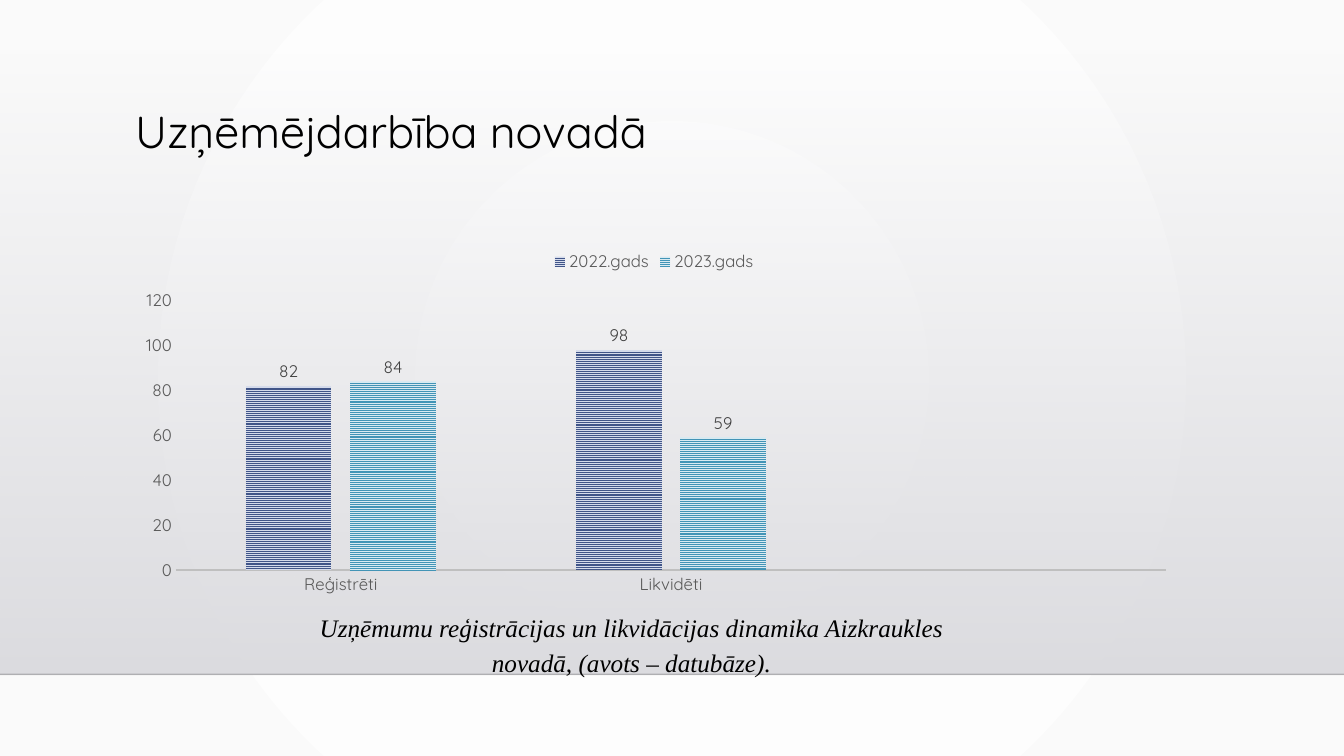
from lxml import etree
from pptx import Presentation
from pptx.chart.data import CategoryChartData
from pptx.dml.color import RGBColor
from pptx.enum import chart as ch, dml, shapes, text
from pptx.oxml import parse_xml
from pptx.oxml.ns import nsdecls, qn
from pptx.util import Pt

BLACK = RGBColor(0x00, 0x00, 0x00)
EDGE = RGBColor(0x00, 0x00, 0x01)
WHITE = RGBColor(0xFF, 0xFF, 0xFF)
OFF_WHITE = RGBColor(0xFA, 0xFA, 0xFA)
BAND_TOP = RGBColor(0xDC, 0xDC, 0xE0)
BAND_BOTTOM = RGBColor(0xDE, 0xDE, 0xE2)
AXIS_LINE = RGBColor(0xBF, 0xBF, 0xBF)
AXIS_TEXT = RGBColor(0x59, 0x59, 0x59)
LABEL_TEXT = RGBColor(0x40, 0x40, 0x40)

SANS, SERIF = "Quicksand", "Times New Roman"
WIDTH, HEIGHT = Pt(960), Pt(540)
BAND_Y, BAND_END = Pt(36.72), Pt(481.68)

CATEGORIES = ["Reģistrēti", "Likvidēti", ""]
# Year, values, pattern foreground, pattern background
YEARS = [
    ("2022.gads", (82, 98, None),
     RGBColor(0x41, 0x55, 0x88), RGBColor(0xD5, 0xDB, 0xEB)),
    ("2023.gads", (84, 59, None),
     RGBColor(0x42, 0x94, 0xB6), RGBColor(0xD9, 0xEA, 0xF1)),
]
PLOT_AREA = {"x": 0.048, "y": 0.167, "w": 0.936, "h": 0.743}


def style_font(font, face, size, colour):
    font.name, font.size = face, Pt(size)
    font.color.rgb = colour


def set_alpha(colour_element, percent):
    etree.SubElement(colour_element, qn("a:alpha")).set("val", str(percent * 1000))


def add_background(slide):
    slide._element.cSld.insert(0, parse_xml(
        f'<p:bg {nsdecls("p", "a")}><p:bgPr><a:gradFill rotWithShape="1"><a:gsLst>'
        f'<a:gs pos="0"><a:srgbClr val="{WHITE}"/></a:gs>'
        f'<a:gs pos="100000"><a:srgbClr val="{OFF_WHITE}"/></a:gs></a:gsLst>'
        '<a:path path="circle"><a:fillToRect l="50000" t="50000" r="50000" b="50000"/>'
        '</a:path></a:gradFill><a:effectLst/></p:bgPr></p:bg>'))


def add_band(slide):
    band = slide.shapes.add_shape(
        shapes.MSO_SHAPE.RECTANGLE, 0, BAND_Y, WIDTH, BAND_END - BAND_Y)
    band.shadow.inherit = False
    band.line.fill.background()
    band.fill.gradient()
    band.fill.gradient_angle = 270
    for stop, position, colour in zip(
            band.fill.gradient_stops, (0, 1), (BAND_TOP, BAND_BOTTOM)):
        stop.position = position
        stop.color.rgb = colour
    set_alpha(next(band._element.spPr.iter(qn("a:srgbClr"))), 0)
    return band


def add_edge(slide):
    edge = slide.shapes.add_connector(
        shapes.MSO_CONNECTOR.STRAIGHT, 0, BAND_END, WIDTH, BAND_END)
    edge.line.width = Pt(1)
    edge.line.color.rgb = EDGE
    properties = edge._element.spPr
    set_alpha(next(properties.iter(qn("a:srgbClr"))), 20)
    etree.SubElement(properties, qn("a:effectLst"))
    return edge


def send_to_back(slide, parts):
    for place, part in enumerate(parts, start=2):
        slide.shapes._spTree.insert(place, part._element)


def write(frame, words, face, size, spacing, align):
    frame.word_wrap = True
    paragraph = frame.paragraphs[0]
    paragraph.alignment = align
    paragraph.line_spacing = spacing
    run = paragraph.add_run()
    run.text = words
    style_font(run.font, face, size, BLACK)
    return paragraph


def fill_title(slide, words):
    title = slide.shapes.title
    title.left, title.top = Pt(89.28), Pt(74.88)
    title.width, title.height = Pt(756), Pt(82.8)
    title.text_frame.vertical_anchor = text.MSO_ANCHOR.TOP
    write(title.text_frame, words, SANS, 32, 0.9, text.PP_ALIGN.LEFT)


def add_caption(slide, words):
    caption = slide.shapes.add_textbox(Pt(210.96), Pt(430.56), Pt(480.24), Pt(56.16))
    paragraph = write(caption.text_frame, words, SERIF, 18, 1.15, text.PP_ALIGN.CENTER)
    caption.text_frame.auto_size = text.MSO_AUTO_SIZE.SHAPE_TO_FIT_TEXT
    paragraph.space_after = Pt(10)
    paragraph.runs[0].font.italic = True


def style_axis(axis):
    axis.has_major_gridlines = False
    axis.major_tick_mark = axis.minor_tick_mark = ch.XL_TICK_MARK.NONE
    style_font(axis.tick_labels.font, SANS, 12, AXIS_TEXT)


def place_plot(chart):
    fields = "".join(f'<c:{key}Mode val="edge"/>' for key in "xy")
    fields += "".join(f'<c:{key} val="{part}"/>' for key, part in PLOT_AREA.items())
    plot_area = chart._chartSpace.chart.plotArea
    for layout in plot_area.findall(qn("c:layout")):
        plot_area.remove(layout)
    plot_area.insert(0, parse_xml(
        f'<c:layout {nsdecls("c")}><c:manualLayout><c:layoutTarget val="inner"/>'
        f'{fields}</c:manualLayout></c:layout>'))


def add_company_chart(slide):
    data = CategoryChartData()
    data.categories = CATEGORIES
    for year, counts, *_ in YEARS:
        data.add_series(year, counts)
    chart = slide.shapes.add_chart(
        ch.XL_CHART_TYPE.COLUMN_CLUSTERED,
        Pt(89.28), Pt(171.36), Pt(756), Pt(259.2), data).chart
    style_font(chart.font, SANS, 10, BLACK)
    chart.has_title = False

    # Legend
    chart.has_legend = True
    chart.legend.position = ch.XL_LEGEND_POSITION.TOP
    chart.legend.include_in_layout = False
    style_font(chart.legend.font, SANS, 12, AXIS_TEXT)

    # Axes
    for axis in (chart.category_axis, chart.value_axis):
        style_axis(axis)
    chart.category_axis.format.line.color.rgb = AXIS_LINE
    chart.category_axis.format.line.width = Pt(1.5)
    scale = chart.value_axis
    scale.minimum_scale, scale.maximum_scale, scale.major_unit = 0, 120, 20
    scale.format.line.fill.background()

    # Columns
    plot = chart.plots[0]
    plot.gap_width, plot.overlap = 164, -22
    plot.vary_by_categories = False
    for column, (_, _, front, back) in zip(plot.series, YEARS):
        column.invert_if_negative = False
        fill = column.format.fill
        fill.patterned()
        fill.pattern = dml.MSO_PATTERN.NARROW_HORIZONTAL
        fill.fore_color.rgb, fill.back_color.rgb = front, back
        column.format.line.fill.background()
        labels = column.data_labels
        labels.show_value = True
        labels.position = ch.XL_LABEL_POSITION.OUTSIDE_END
        style_font(labels.font, SANS, 12, LABEL_TEXT)
    place_plot(chart)


def main():
    deck = Presentation()
    deck.slide_width, deck.slide_height = WIDTH, HEIGHT
    slide = deck.slides.add_slide(deck.slide_layouts.get_by_name("Title Only"))

    # Backdrop
    add_background(slide)
    send_to_back(slide, [add_band(slide), add_edge(slide)])

    # Content
    fill_title(slide, "Uzņēmējdarbība novadā")
    add_company_chart(slide)
    add_caption(slide, "Uzņēmumu reģistrācijas un likvidācijas dinamika "
                       "Aizkraukles novadā, (avots – datubāze).")
    deck.save("out.pptx")


if __name__ == "__main__":
    main()
